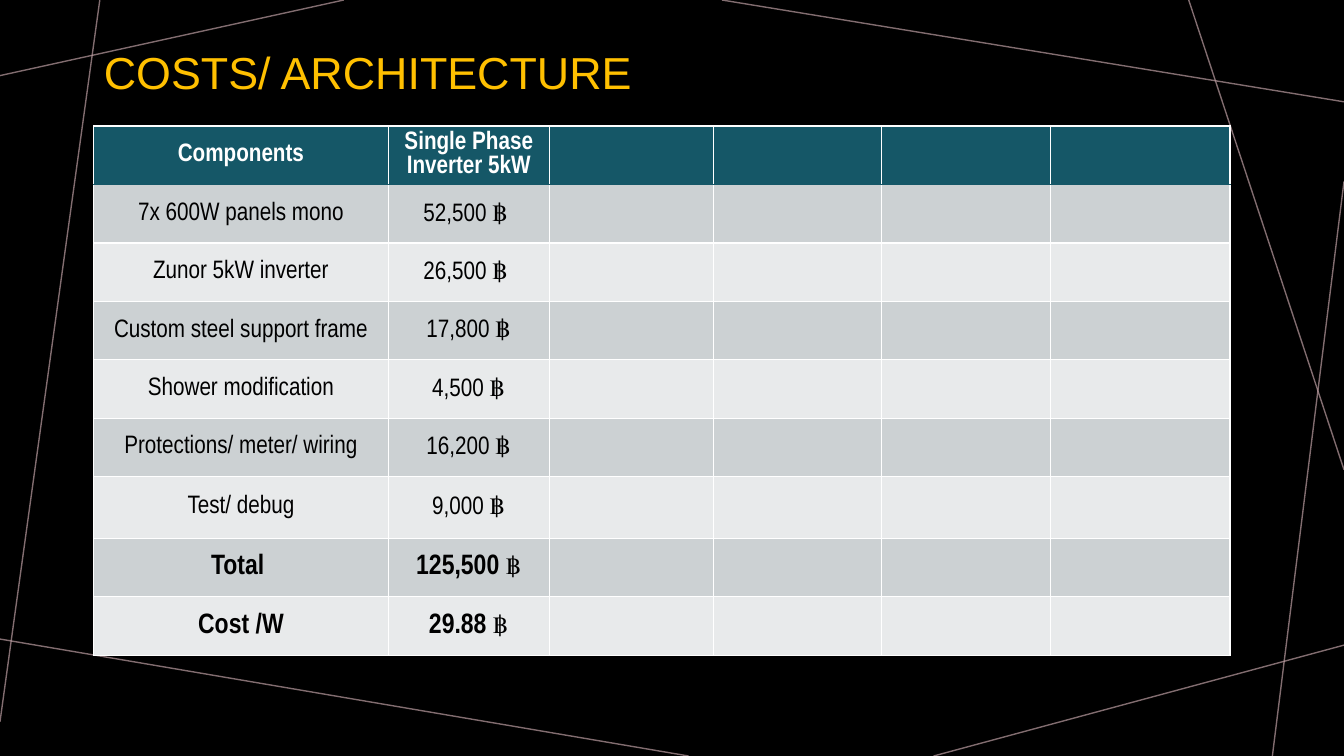
from lxml.etree import SubElement
from pptx import Presentation
from pptx.dml.color import RGBColor
from pptx.enum.shapes import MSO_CONNECTOR
from pptx.enum.text import MSO_ANCHOR, MSO_AUTO_SIZE, PP_ALIGN
from pptx.oxml.ns import qn
from pptx.util import Inches, Pt

BLACK = RGBColor(0x00, 0x00, 0x00)
WHITE = RGBColor(0xFF, 0xFF, 0xFF)
GOLD = RGBColor(0xFF, 0xC0, 0x00)
TEAL = RGBColor(0x15, 0x57, 0x67)
GREY = RGBColor(0xCC, 0xD1, 0xD3)
PALE_GREY = RGBColor(0xE8, 0xEA, 0xEB)
MAUVE = RGBColor(0xBA, 0x9C, 0xA0)


def write(paragraph, text, color, **formats):
    run = paragraph.add_run()
    run.text = text
    run.font.color.rgb = color
    for attribute, value in formats.items():
        setattr(run.font, attribute, value)


def add_border(cell, side, color, width):
    border = SubElement(cell._tc.get_or_add_tcPr(), qn(f"a:{side}"), w=str(Pt(width)))
    fill = SubElement(border, qn("a:solidFill"))
    SubElement(fill, qn("a:srgbClr"), val=str(color))


prs = Presentation()
prs.slide_width = Inches(13.33)
prs.slide_height = Inches(7.5)
slide = prs.slides.add_slide(prs.slide_layouts[5])
slide.background.fill.solid()
slide.background.fill.fore_color.rgb = BLACK

rays = [
    (3.41, 0, 0, 0.75),
    (0.99, 0, 0, 7.16),
    (6.83, 7.5, 0, 6.34),
    (13.33, 6.4, 9.26, 7.5),
    (13.33, 1.8, 12.62, 7.5),
    (13.33, 4.66, 11.79, 0),
    (13.33, 1.01, 7.16, 0),
]
for ends in rays:
    ray = slide.shapes.add_connector(MSO_CONNECTOR.STRAIGHT, *map(Inches, ends))
    ray.line.color.rgb = MAUVE
    ray.line.width = Pt(1)
    tint = ray.line._ln.find(".//" + qn("a:srgbClr"))
    SubElement(tint, qn("a:alpha"), val="70000")
    SubElement(ray._element.spPr, qn("a:effectLst"))

heading = slide.shapes.title
heading_place = {"left": 0.93, "top": 0.24, "width": 11.03, "height": 1.01}
for attribute, value in heading_place.items():
    setattr(heading, attribute, Inches(value))
heading.text_frame.auto_size = MSO_AUTO_SIZE.NONE
heading.text_frame.vertical_anchor = MSO_ANCHOR.MIDDLE
heading_line = heading.text_frame.paragraphs[0]
heading_line.alignment = PP_ALIGN.LEFT
heading_line.line_spacing = 0.9
write(heading_line, "COSTS/ ARCHITECTURE", GOLD, name="Arial", size=Pt(32))

costs = [
    ("Components", "Single Phase Inverter 5kW"),
    ("7x 600W panels mono", "52,500 ฿ "),
    ("Zunor 5kW inverter", "26,500 ฿ "),
    ("Custom steel support frame", "17,800 ฿"),
    ("Shower modification", "4,500 ฿"),
    ("Protections/ meter/ wiring", "16,200 ฿"),
    ("Test/ debug", "9,000 ฿"),
    ("Total ", "125,500 ฿"),
    ("Cost /W", "29.88 ฿"),
]
column_widths = [2.92, 1.6, 1.63, 1.66, 1.68, 1.78]
row_heights = [0.58] * 6 + [0.61] + [0.58] * 2
first_summary_row = 7

cost_grid = slide.shapes.add_table(
    len(costs),
    len(column_widths),
    Inches(0.93),
    Inches(1.25),
    Inches(sum(column_widths)),
    Inches(sum(row_heights)),
).table
for column, width in zip(cost_grid.columns, column_widths):
    column.width = Inches(width)
for row, height in zip(cost_grid.rows, row_heights):
    row.height = Inches(height)

for row_number, entries in enumerate(costs):
    is_header = row_number == 0
    is_summary = row_number >= first_summary_row
    band = TEAL if is_header else GREY if row_number % 2 else PALE_GREY
    ink = WHITE if is_header else BLACK
    entry_format = {
        "name": "Arial Narrow",
        "size": Pt(20 if is_summary else 18),
        "bold": is_header or is_summary,
    }
    for column_number, cell in enumerate(cost_grid.rows[row_number].cells):
        for side in ("lnL", "lnR", "lnT", "lnB"):
            under_header = (row_number, side) in ((0, "lnB"), (1, "lnT"))
            add_border(cell, side, *((TEAL, 0.75) if under_header else (WHITE, 1)))
        cell.fill.solid()
        cell.fill.fore_color.rgb = band
        cell.vertical_anchor = MSO_ANCHOR.MIDDLE
        if column_number >= len(entries):
            continue
        entry = cell.text_frame.paragraphs[0]
        entry.alignment = PP_ALIGN.CENTER
        amount, baht, _ = entries[column_number].partition("฿")
        if is_summary and baht:
            write(entry, amount, ink, **entry_format)
            write(entry, baht, ink, name="Arial Narrow", size=Pt(18), bold=False)
        else:
            write(entry, entries[column_number], ink, **entry_format)

prs.save("out.pptx")
